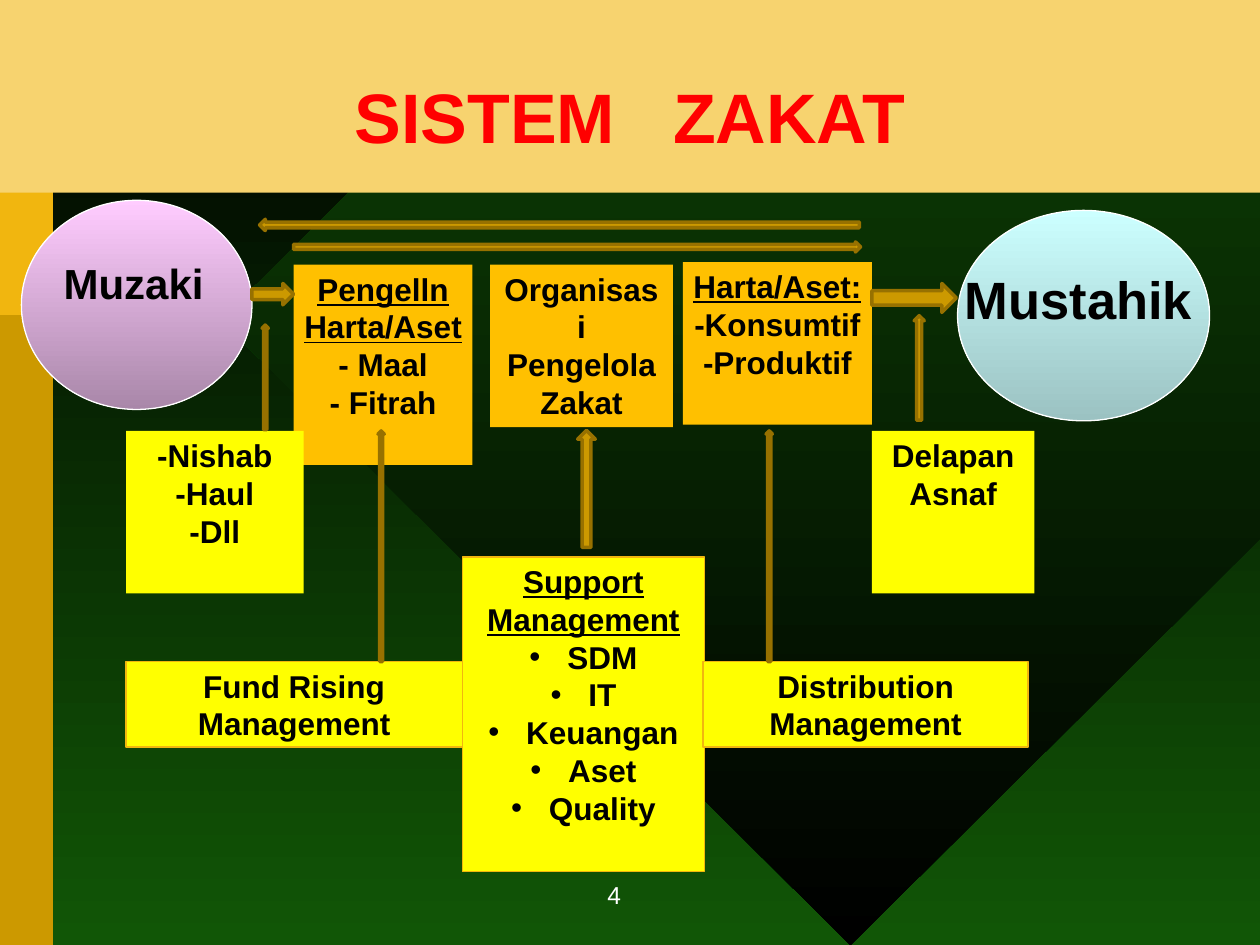
from dataclasses import dataclass

from lxml.etree import SubElement
from pptx import Presentation
from pptx.dml.color import RGBColor
from pptx.enum.shapes import MSO_SHAPE
from pptx.enum.text import MSO_ANCHOR, MSO_AUTO_SIZE, PP_ALIGN
from pptx.oxml.ns import qn
from pptx.util import Inches, Pt


@dataclass(frozen=True)
class Theme:
    font: str = "Arial"
    black: str = "000000"
    white: str = "FFFFFF"
    red: str = "FF0000"
    green: str = "115606"
    sand: str = "F7D36F"
    gold: str = "F1B60F"
    ochre: str = "CC9900"
    bronze: str = "977100"
    orange: str = "FFC000"
    yellow: str = "FFFF00"
    pink: tuple = ("FFCCFF", "A987A9")
    cyan: tuple = ("CCFFFF", "9BC2C2")
    title_size: int = 40
    large_size: int = 30
    label_size: int = 24
    text_size: int = 18
    number_size: int = 14


def set_values(target, values):
    for name, value in values.items():
        setattr(target, name, value)


class SlideBuilder:
    """Draws styled elements on the current slide."""

    def __init__(self, page, theme):
        self.page = page
        self.theme = theme

    def paint(self, fill, colour):
        if isinstance(colour, str):
            fill.solid()
            fill.fore_color.rgb = RGBColor.from_string(colour)
            return
        fill.gradient()
        fill.gradient_angle = 270
        for stop, stop_colour in zip(fill.gradient_stops, colour):
            stop.color.rgb = RGBColor.from_string(stop_colour)

    def background(self, colours):
        self.paint(self.page.background.fill, colours)

    def shape(self, kind, place, colour, line=None, line_width=0.75):
        shape = self.page.shapes.add_shape(kind, *map(Inches, place))
        shape.shadow.inherit = False
        self.paint(shape.fill, colour)
        if line:
            self.paint(shape.line.fill, line)
            shape.line.width = Pt(line_width)
        else:
            shape.line.fill.background()
        return shape

    def add_lines(self, shape, lines, size, colour=None, bold=True, headings=0,
                  bullets=False, spacing=None, frame_values=None):
        frame = shape.text_frame
        set_values(frame, {
            "word_wrap": True, "auto_size": MSO_AUTO_SIZE.NONE,
            "vertical_anchor": MSO_ANCHOR.TOP,
            "margin_left": Inches(0.08), "margin_right": Inches(0.08),
            "margin_top": Inches(0.04), "margin_bottom": Inches(0.04),
            **(frame_values or {})})
        for index, line in enumerate(lines):
            para = frame.add_paragraph() if index else frame.paragraphs[0]
            set_values(para, {"alignment": PP_ALIGN.CENTER, "line_spacing": spacing})
            span = para.add_run()
            span.text = line
            set_values(span.font, {
                "name": self.theme.font, "size": Pt(size), "bold": bold,
                "underline": True if index < headings else None})
            span.font.color.rgb = RGBColor.from_string(colour or self.theme.black)
            if bullets and index >= headings:
                self.bullet(para)

    def bullet(self, para):
        properties = para._p.get_or_add_pPr()
        indent = Inches(0.3)
        properties.set("marL", str(indent))
        properties.set("indent", str(-indent))
        SubElement(properties, qn("a:buFont")).set("typeface", self.theme.font)
        SubElement(properties, qn("a:buChar")).set("char", "•")

    def title(self, text, place):
        title = self.page.shapes.title
        left, top, width, height = map(Inches, place)
        set_values(title, {"left": left, "top": top, "width": width, "height": height})
        self.page.shapes._spTree.append(title._element)
        self.paint(title.fill, self.theme.sand)
        self.add_lines(title, [text], self.theme.title_size, self.theme.red, spacing=0.85,
                       frame_values={"vertical_anchor": MSO_ANCHOR.MIDDLE,
                                     "margin_top": Inches(0.45)})

    def label(self, text, place, size, **style):
        box = self.page.shapes.add_textbox(*map(Inches, place))
        self.add_lines(box, [text], size, **style)

    def box(self, place, colour, lines, line=None, **style):
        box = self.shape(MSO_SHAPE.RECTANGLE, place, colour, line)
        self.add_lines(box, lines, self.theme.text_size, **style)

    def arrow(self, place, turn=0):
        arrow = self.shape(MSO_SHAPE.RIGHT_ARROW, place, self.theme.ochre,
                           self.theme.bronze, 2)
        arrow.rotation = turn


def main():
    theme = Theme()
    deck = Presentation()
    set_values(deck, {"slide_width": Inches(10), "slide_height": Inches(7.5)})
    slide = SlideBuilder(deck.slides.add_slide(deck.slide_layouts[5]), theme)
    no_wrap = {"word_wrap": False}

    slide.background((theme.black, theme.green))
    slide.shape(MSO_SHAPE.DIAMOND, (1.75, -2.42, 10, 9.92), (theme.green, theme.black))
    for height, colour in ((7.5, theme.ochre), (2.5, theme.gold)):
        slide.shape(MSO_SHAPE.RECTANGLE, (0, 0, 0.42, height), colour)
    slide.title("SISTEM   ZAKAT", (0, 0, 10, 1.53))
    slide.label("4", (2.5, 6.67, 4.75, 0.59), theme.number_size, colour=theme.white,
                bold=False, frame_values={"vertical_anchor": MSO_ANCHOR.BOTTOM})

    slide.shape(MSO_SHAPE.OVAL, (0.17, 1.59, 1.83, 1.66), theme.pink, theme.white)
    slide.shape(MSO_SHAPE.OVAL, (7.6, 1.67, 2, 1.67), theme.cyan, theme.white)
    slide.label("Muzaki", (0.42, 2, 1.28, 0.48), theme.label_size)
    slide.label("Mustahik", (7.57, 2.08, 1.98, 0.58), theme.large_size,
                frame_values=no_wrap)

    slide.box((2.33, 2.1, 1.42, 1.59), theme.orange,
              ["Pengelln", "Harta/Aset", "- Maal", "- Fitrah"], headings=2)
    slide.box((3.89, 2.1, 1.45, 1.29), theme.orange, ["Organisasi Pengelola", "Zakat"])
    slide.box((5.42, 2.08, 1.5, 1.29), theme.orange,
              ["Harta/Aset:", "-Konsumtif", "-Produktif"], headings=1,
              frame_values=no_wrap)
    slide.box((1, 3.42, 1.41, 1.29), theme.yellow, ["-Nishab", "-Haul", "-Dll"])
    slide.box((3.67, 4.42, 1.92, 2.5), theme.yellow,
              ["Support Management", "SDM", "IT", "Keuangan", "Aset", "Quality"],
              line=theme.gold, headings=1, bullets=True)
    slide.box((6.92, 3.42, 1.29, 1.29), theme.yellow, ["Delapan Asnaf"])

    for place in ((2, 2.25, 0.33, 0.17), (2.33, 1.92, 4.5, 0.08), (6.92, 2.25, 0.67, 0.23)):
        slide.arrow(place)
    slide.arrow((2.06, 1.74, 4.76, 0.09), 180)
    for place in ((1.69, 2.97, 0.83, 0.05), (4.19, 3.81, 0.93, 0.14), (6.88, 2.88, 0.83, 0.08)):
        slide.arrow(place, 270)

    for left, width, text in ((1, 2.67, "Fund Rising Management"),
                              (5.58, 2.58, "Distribution Management")):
        slide.box((left, 5.25, width, 0.68), theme.yellow, [text], line=theme.gold)
    for left in (2.11, 5.19):
        slide.arrow((left, 4.31, 1.83, 0.05), 270)

    deck.save("out.pptx")


if __name__ == "__main__":
    main()
